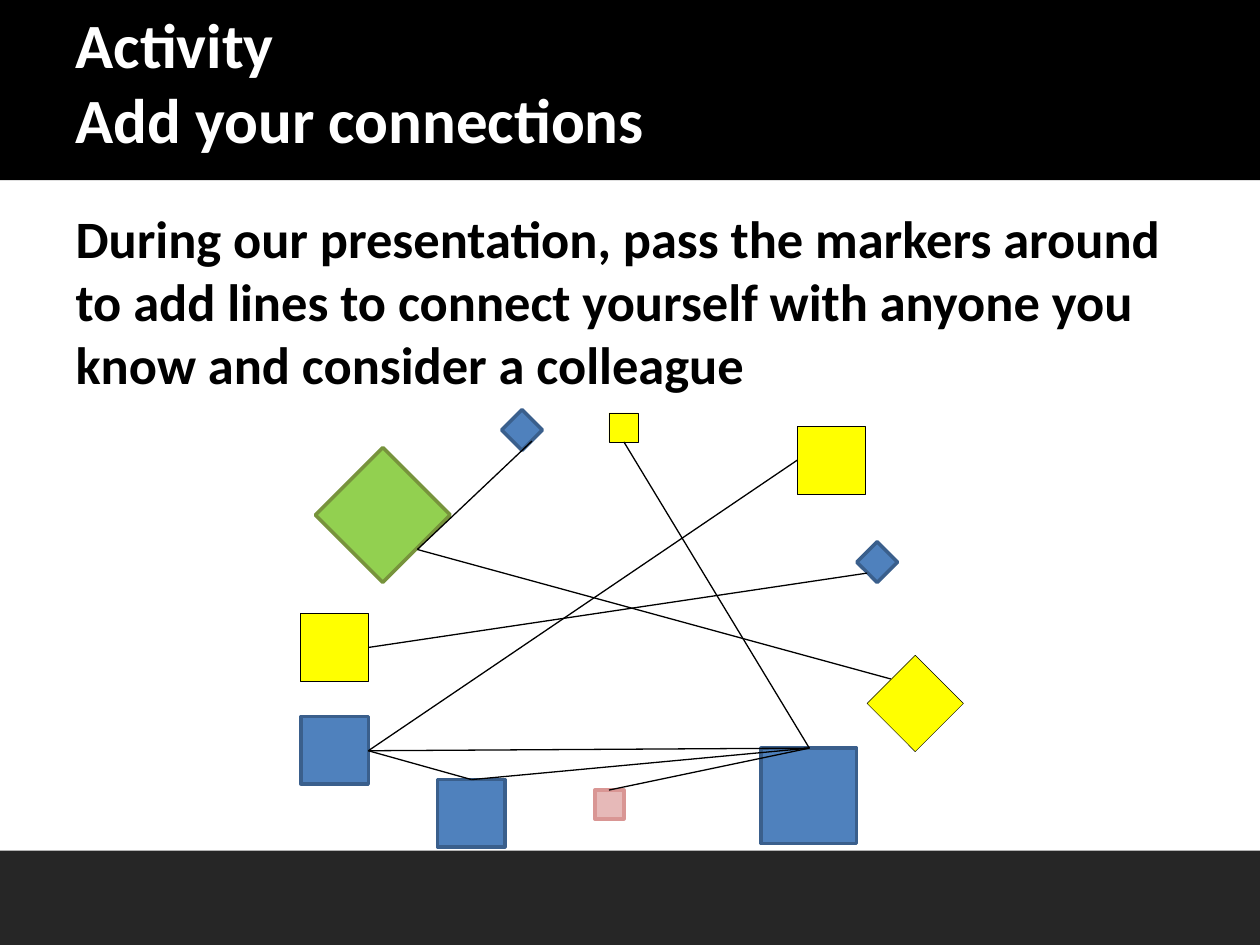
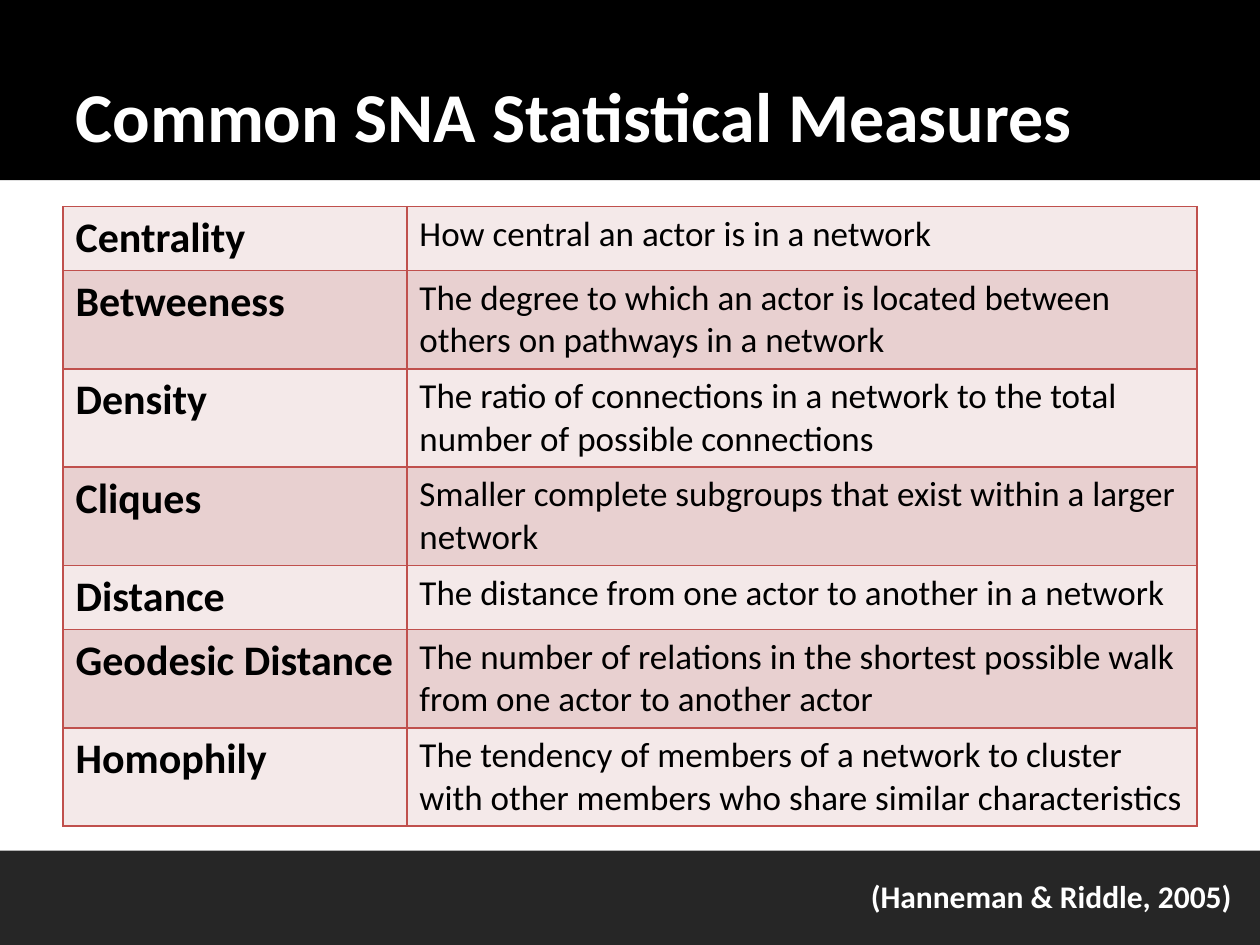
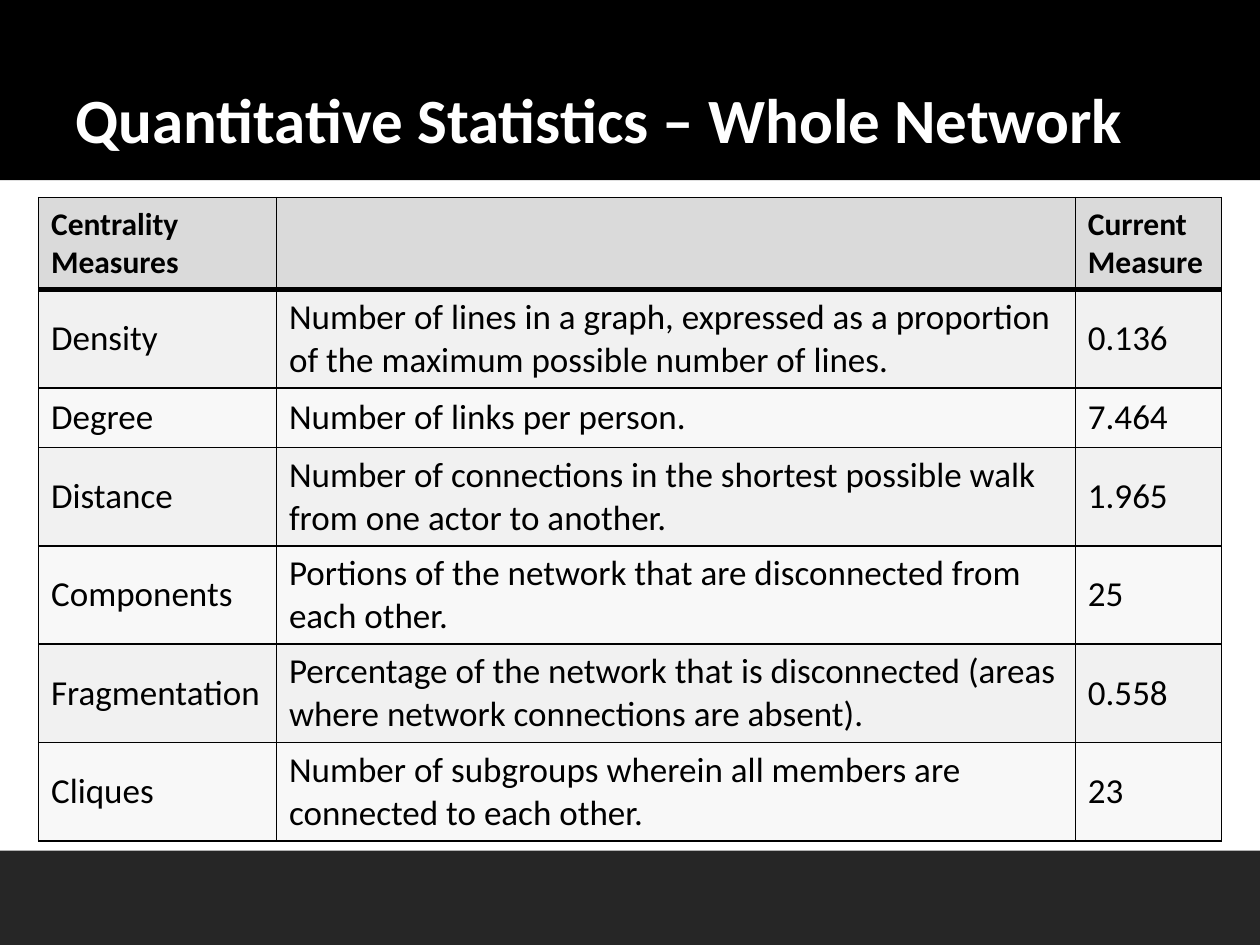
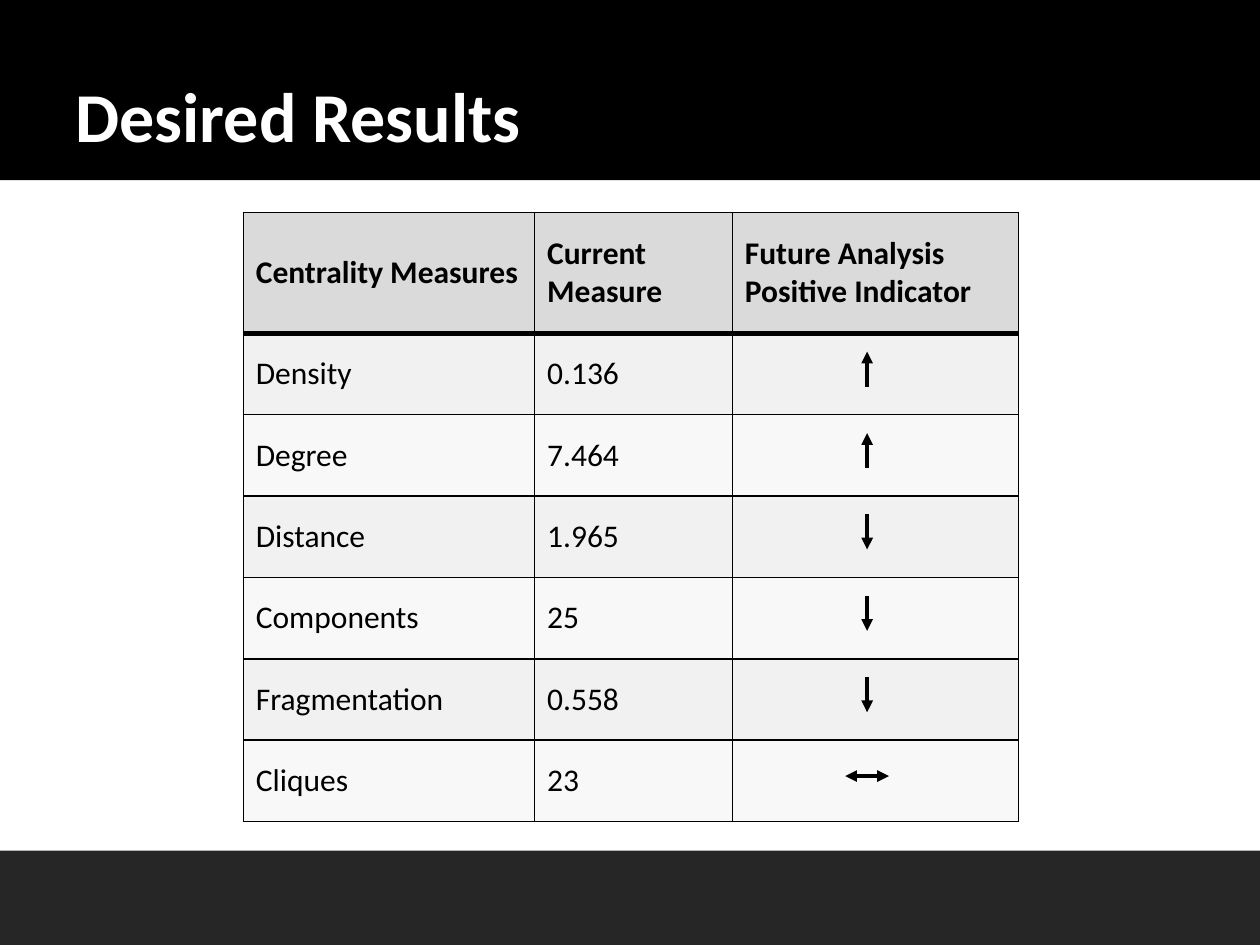
"""Build four slides on social network analysis measures."""
from lxml import etree
from pptx import Presentation
from pptx.dml.color import RGBColor
from pptx.enum.shapes import MSO_CONNECTOR, MSO_SHAPE
from pptx.enum.text import MSO_ANCHOR, MSO_AUTO_SIZE, PP_ALIGN
from pptx.oxml.ns import qn
from pptx.util import Pt

RECTANGLE = MSO_SHAPE.RECTANGLE
STRAIGHT = MSO_CONNECTOR.STRAIGHT
TOP, MIDDLE, BOTTOM = MSO_ANCHOR.TOP, MSO_ANCHOR.MIDDLE, MSO_ANCHOR.BOTTOM
NO_FIT, GROW = MSO_AUTO_SIZE.NONE, MSO_AUTO_SIZE.SHAPE_TO_FIT_TEXT
LEFT = PP_ALIGN.LEFT
FONT = "Calibri"
COLORS = {
    "black": "000000", "white": "FFFFFF", "footer": "262626",
    "yellow": "FFFF00", "green": "92D050", "green edge": "77933C",
    "blue": "4F81BD", "blue edge": "3A5F8C", "pink": "E6B9B8", "pink edge": "D99694",
    "red": "C0504D", "rose light": "F4E9E9", "rose dark": "E8D0D0",
    "gray head": "DADADA", "gray dark": "F1F1F1", "gray light": "F8F8F8",
}


def rgb(name):
    return RGBColor.from_string(COLORS[name])


def style_text(frame, size, color="black", bold=True, before=None, after=None):
    for paragraph in frame.paragraphs:
        paragraph.alignment = LEFT
        if before is not None:
            paragraph.space_before = Pt(before)
        if after is not None:
            paragraph.space_after = Pt(after)
        for run in paragraph.runs:
            run.font.name, run.font.size, run.font.bold = FONT, Pt(size), bold
            run.font.color.rgb = rgb(color)


prs = Presentation()
prs.slide_width, prs.slide_height = Pt(720), Pt(540)
title_and_content, title_only = prs.slide_layouts[1], prs.slide_layouts[5]

headings = [
    (title_and_content, "Activity\nAdd your connections", 36),
    (title_only, "Common SNA Statistical Measures", 40),
    (title_only, "Quantitative Statistics – Whole Network", 36),
    (title_only, "Desired Results", 40),
]
for layout, heading, size in headings:
    title = prs.slides.add_slide(layout).shapes.title
    title.left, title.top, title.width, title.height = Pt(36), Pt(24), Pt(648), Pt(69)
    frame = title.text_frame
    frame.auto_size, frame.vertical_anchor = NO_FIT, BOTTOM
    frame.paragraphs[0].text = heading
    style_text(frame, size, "white")
activity, measures, statistics, results = prs.slides

# The bands belong to the master, so every slide inherits them.
master_tree = prs.slide_master.element.cSld.spTree
for index, (top, height, color) in enumerate([(486, 54, "footer"), (-0.5, 103.5, "black")]):
    band = activity.shapes.add_shape(RECTANGLE, Pt(0), Pt(top), Pt(720), Pt(height))
    band.shadow.inherit = False
    band.fill.solid()
    band.fill.fore_color.rgb = rgb(color)
    band.line.fill.background()
    band.element.nvSpPr.cNvPr.set("id", str(100 + index))
    master_tree.insert(2 + index, band.element)

invitation = activity.placeholders[1]
invitation.left, invitation.top, invitation.width, invitation.height = Pt(36), Pt(114), Pt(648), Pt(360)
frame = invitation.text_frame
frame.auto_size = NO_FIT
frame.text = ("During our presentation, pass the markers around to add lines "
              "to connect yourself with anyone you know and consider a colleague")
style_text(frame, 30)
properties = frame.paragraphs[0]._p.get_or_add_pPr()
properties.set("marL", "0")
properties.set("indent", "0")
etree.SubElement(properties, qn("a:buNone"))

edges = {"yellow": ("black", 0.25), "green": ("green edge", 2),
         "blue": ("blue edge", 2), "pink": ("pink edge", 2)}
people = [
    ("yellow", 171.5, 350.5, 39, 0),
    ("green", 191.5, 267, 54.5, 45),
    ("pink", 340, 451.5, 16.5, 0),
    ("blue", 290, 237.5, 16.5, 45),
    ("yellow", 455.5, 243.5, 39, 0),
    ("yellow", 503.5, 382.5, 39, 45),
    ("blue", 435, 427.5, 54.5, 0),
    ("blue", 493, 313, 16.5, 45),
    ("blue", 172, 409.5, 38.5, 0),
    ("blue", 250, 445.5, 38.5, 0),
    ("yellow", 348, 236, 16.5, 0),
]
for color, left, top, side, rotation in people:
    person = activity.shapes.add_shape(RECTANGLE, Pt(left), Pt(top), Pt(side), Pt(side))
    person.rotation = rotation
    person.shadow.inherit = False
    person.fill.solid()
    person.fill.fore_color.rgb = rgb(color)
    edge, weight = edges[color]
    person.line.color.rgb, person.line.width = rgb(edge), Pt(weight)

spaced, plain = 6, None
measure_rows = [
    ("Centrality", "How central an actor is in a network"),
    ("Betweeness", "The degree to which an actor is located between others on pathways in a network"),
    ("Density", "The ratio of connections in a network to the total number of possible connections"),
    ("Cliques", "Smaller complete subgroups that exist within a larger network"),
    ("Distance", "The distance from one actor to another in a network"),
    ("Geodesic Distance", "The number of relations in the shortest possible walk from one actor to another actor"),
    ("Homophily", "The tendency of members of a network to cluster with other members "
                  "who share similar characteristics"),
]
findings = [
    ("Density", "Number of lines in a graph, expressed as a proportion "
                "of the maximum possible number of lines.", "0.136"),
    ("Degree", "Number of links per person.", "7.464"),
    ("Distance", "Number of connections in the shortest possible walk from one actor to another.", "1.965"),
    ("Components", "Portions of the network that are disconnected from each other.", "25"),
    ("Fragmentation", "Percentage of the network that is disconnected "
                      "(areas where network connections are absent).", "0.558"),
    ("Cliques", "Number of subgroups wherein all members are connected to each other.", "23"),
]
statistic_rows = [("Centrality Measures", "", "Current\nMeasure")] + findings
result_rows = [("Centrality Measures", "Current\nMeasure", "Future Analysis Positive Indicator")]
result_rows += [(name, value, "") for name, _, value in findings]

tables = [
    (measures, 36, 118, (196.5, 451.5), (36.5, 55, 55, 55, 36.5, 55, 55),
     measure_rows, False, 20, None, "red", ("rose light", "rose dark")),
    (statistics, 22, 113, (136, 456.5, 83.5), (52.5, 55, 34, 55, 55, 55, 55),
     statistic_rows, True, 20, 2, "black", ("gray light", "gray dark")),
    (results, 139, 121.5, (166.5, 113, 163.5), [69] + [46.5] * 6,
     result_rows, True, 18, 1, "black", ("gray light", "gray dark")),
]
for slide, left, top, widths, heights, rows, headed, size, value_column, border, fills in tables:
    table = slide.shapes.add_table(len(rows), len(widths), Pt(left), Pt(top),
                                   Pt(sum(widths)), Pt(sum(heights))).table
    table.first_row = table.horz_banding = False
    for column, width in zip(table.columns, widths):
        column.width = Pt(width)
    for r, (height, texts) in enumerate(zip(heights, rows)):
        table.rows[r].height = Pt(height)
        is_head = headed and r == 0
        for c, text in enumerate(texts):
            cell = table.cell(r, c)
            cell.text_frame.text = text
            cell.vertical_anchor = MIDDLE if headed else TOP
            if is_head:
                gap = plain if "\n" in text else spaced
                style_text(cell.text_frame, 18, before=gap, after=gap)
            elif headed:
                gap = spaced if c == value_column else plain
                style_text(cell.text_frame, size, bold=False, before=gap, after=gap)
            else:
                style_text(cell.text_frame, 24 if c == 0 else size, bold=c == 0)
            cell_properties = cell._tc.get_or_add_tcPr()
            for side in ("lnL", "lnR", "lnT", "lnB"):
                heavy = headed and (r, side) in ((0, "lnB"), (1, "lnT"))
                line = etree.SubElement(cell_properties, qn(f"a:{side}"), w=str(Pt(3 if heavy else 1)))
                paint = etree.SubElement(line, qn("a:solidFill"))
                etree.SubElement(paint, qn("a:srgbClr"), val=COLORS[border])
            cell.fill.solid()
            cell.fill.fore_color.rgb = rgb("gray head" if is_head else fills[r % 2])

citation = measures.shapes.add_textbox(Pt(490.5), Pt(497.5), Pt(222.5), Pt(29))
frame = citation.text_frame
frame.word_wrap, frame.auto_size = False, GROW
frame.text = "(Hanneman & Riddle, 2005)"
style_text(frame, 18, "white", after=6)

green, top_diamond, low_diamond = (238.5, 314), (304, 252), (509, 388)
left_square, low_square, big_square = (210.5, 429), (269.5, 445.5), (462.5, 427.5)
small_yellow, left_yellow, right_yellow = (356.5, 252.5), (210.5, 370), (455.5, 263)
right_diamond, pink = (495.5, 327.5), (348, 451.5)
links = [
    (green, top_diamond), (green, low_diamond), (left_square, low_square),
    (low_square, big_square), (big_square, small_yellow), (left_yellow, right_diamond),
    (left_square, big_square), (left_square, right_yellow), (pink, big_square),
]
lines = [(activity, start, end, 0.75, ()) for start, end in links]

arrow_x, first_y, row_step = 495.5, 211, 46.5
for row, direction in enumerate([-1, -1, 1, 1, 1]):
    y = first_y + row * row_step
    lines.append((results, (arrow_x, y - 10 * direction), (arrow_x, y + 10 * direction),
                  2.25, ("tailEnd",)))
y = first_y + 5 * row_step
lines.append((results, (arrow_x - 12.5, y), (arrow_x + 12.5, y), 2.25, ("headEnd", "tailEnd")))

for slide, start, end, weight, arrowheads in lines:
    link = slide.shapes.add_connector(STRAIGHT, *map(Pt, start + end))
    link.line.color.rgb, link.line.width = rgb("black"), Pt(weight)
    for arrowhead in arrowheads:
        etree.SubElement(link.line._get_or_add_ln(), qn(f"a:{arrowhead}"), type="triangle")
    etree.SubElement(link.element.spPr, qn("a:effectLst"))

prs.save("out.pptx")
